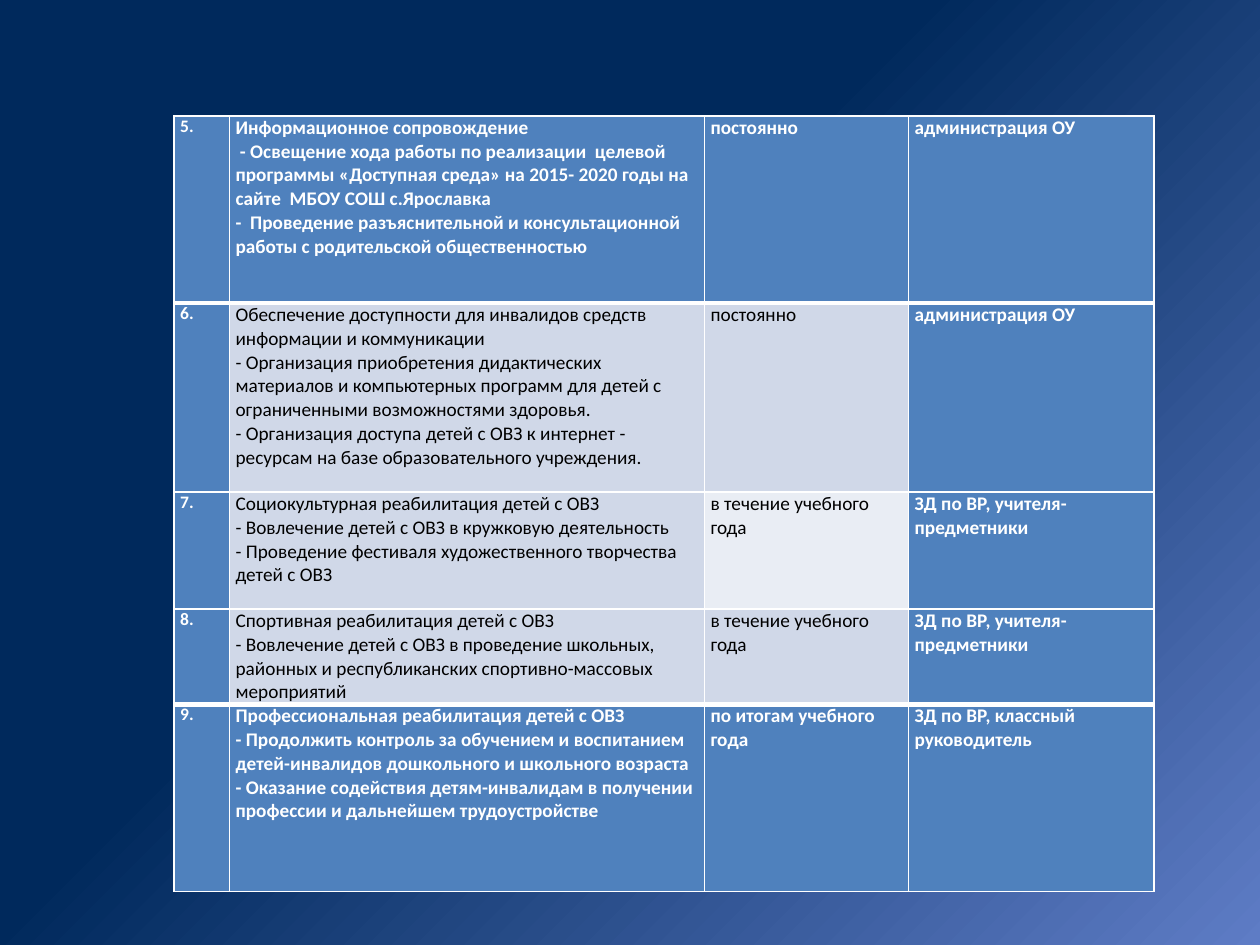
"""Build a slide with a table of accessibility measures, items 5 to 9."""
from dataclasses import dataclass

from lxml import etree
from pptx import Presentation
from pptx.dml.color import RGBColor
from pptx.oxml.ns import qn
from pptx.util import Inches, Pt

WHITE = RGBColor(0xFF, 0xFF, 0xFF)
BLACK = RGBColor(0x00, 0x00, 0x00)
BLUE = RGBColor(0x4F, 0x81, 0xBD)
BAND = RGBColor(0xD0, 0xD8, 0xE8)
PALE = RGBColor(0xE9, 0xED, 0xF4)
GLOW = RGBColor(0x5E, 0x7C, 0xC5)
NAVY = RGBColor(0x00, 0x29, 0x5C)

WIDTH, HEIGHT = Inches(10), Inches(7.5)
LEFT, TOP = 0.138, 0.1227
COLUMNS = (0.044, 0.377, 0.162, 0.195)
FONT = "Calibri"
NUMBER_SIZE, TEXT_SIZE = Pt(10), Pt(11)
THIN, THICK = Pt(1), Pt(3)
MARGIN = Inches(0.05)


@dataclass(frozen=True)
class Measure:
    """One table row; height is a share of the slide's height."""
    number: str
    tasks: tuple[str, ...]
    term: str
    owner: str
    height: float
    task_fill: RGBColor = BAND
    term_fill: RGBColor = BAND
    top: int = THIN
    bottom: int = THIN


MEASURES = (
    Measure("5.", (
        "Информационное сопровождение",
        " - Освещение хода работы по реализации  целевой программы "
        "«Доступная среда» на 2015- 2020 годы на сайте  МБОУ СОШ с.Ярославка",
        "-  Проведение разъяснительной и консультационной работы "
        "с родительской общественностью",
    ), "постоянно", "администрация ОУ", 0.198, BLUE, BLUE, bottom=THICK),
    Measure("6.", (
        "Обеспечение доступности для инвалидов средств информации и коммуникации",
        "- Организация приобретения дидактических материалов и компьютерных "
        "программ для детей с ограниченными возможностями здоровья.",
        "- Организация доступа детей с ОВЗ к интернет - ресурсам на базе "
        "образовательного учреждения.",
    ), "постоянно", "администрация ОУ", 0.2, top=THICK),
    Measure("7.", (
        "Социокультурная реабилитация детей с ОВЗ",
        "- Вовлечение детей с ОВЗ в кружковую деятельность",
        "- Проведение фестиваля художественного творчества детей с ОВЗ",
    ), "в течение учебного года", "ЗД по ВР, учителя-предметники", 0.124,
        term_fill=PALE),
    Measure("8.", (
        "Спортивная реабилитация детей с ОВЗ",
        "- Вовлечение детей с ОВЗ в проведение школьных,  районных и "
        "республиканских спортивно-массовых мероприятий",
    ), "в течение учебного года", "ЗД по ВР, учителя-предметники", 0.099,
        bottom=THICK),
    Measure("9.", (
        "Профессиональная реабилитация детей с ОВЗ",
        "- Продолжить контроль за обучением и воспитанием детей-инвалидов "
        "дошкольного и школьного возраста",
        "- Оказание содействия детям-инвалидам в получении профессии и "
        "дальнейшем трудоустройстве",
    ), "по итогам учебного года", "ЗД по ВР, классный руководитель", 0.198,
        BLUE, BLUE, top=THICK),
)


def paint_background(s) -> None:
    """Fill the slide with a radial glow from its bottom right corner."""
    fill = s.background.fill
    fill.gradient()
    for stop, color, position in zip(fill.gradient_stops, (GLOW, NAVY), (0, 0.58)):
        stop.color.rgb = color
        stop.position = position
    grad = s.element.find(".//" + qn("a:gradFill"))
    lin = grad.find(qn("a:lin"))
    radial = etree.Element(qn("a:path"), path="circle")
    etree.SubElement(radial, qn("a:fillToRect"), l="100000", t="100000")
    grad.replace(lin, radial)


def set_borders(cell, top: int, bottom: int) -> None:
    """Draw white borders, with the given top and bottom widths."""
    tc_pr = cell._tc.get_or_add_tcPr()
    sides = (("a:lnL", THIN), ("a:lnR", THIN), ("a:lnT", top), ("a:lnB", bottom))
    for i, (tag, width) in enumerate(sides):
        ln = etree.Element(qn(tag), w=str(int(width)))
        solid = etree.SubElement(ln, qn("a:solidFill"))
        etree.SubElement(solid, qn("a:srgbClr"), val=str(WHITE))
        tc_pr.insert(i, ln)


def fill_cell(cell, lines: tuple[str, ...], fill: RGBColor, size: int) -> None:
    """Write the lines, bold white on blue and plain black elsewhere."""
    cell.fill.solid()
    cell.fill.fore_color.rgb = fill
    cell.margin_left = cell.margin_right = MARGIN
    cell.margin_top = cell.margin_bottom = 0
    tf = cell.text_frame
    tf.text = "\n".join(lines)
    for p in tf.paragraphs:
        p.font.name = FONT
        p.font.size = size
        p.font.bold = fill == BLUE
        p.font.color.rgb = WHITE if fill == BLUE else BLACK


def add_measures(s) -> None:
    """Add the table of measures."""
    height = sum(m.height for m in MEASURES)
    table = s.shapes.add_table(
        len(MEASURES), len(COLUMNS), int(WIDTH * LEFT), int(HEIGHT * TOP),
        int(WIDTH * sum(COLUMNS)), int(HEIGHT * height)).table
    table.first_row = table.horz_banding = False
    for column, share in zip(table.columns, COLUMNS):
        column.width = int(WIDTH * share)
    for row, m in zip(table.rows, MEASURES):
        row.height = int(HEIGHT * m.height)
        contents = (
            ((m.number,), BLUE, NUMBER_SIZE),
            (m.tasks, m.task_fill, TEXT_SIZE),
            ((m.term,), m.term_fill, TEXT_SIZE),
            ((m.owner,), BLUE, TEXT_SIZE),
        )
        for cell, (lines, fill, size) in zip(row.cells, contents):
            fill_cell(cell, lines, fill, size)
            set_borders(cell, m.top, m.bottom)


def main() -> None:
    """Build and save the slide."""
    prs = Presentation()
    prs.slide_width, prs.slide_height = WIDTH, HEIGHT
    s = prs.slides.add_slide(prs.slide_layouts[6])
    paint_background(s)
    add_measures(s)
    prs.save("out.pptx")


if __name__ == "__main__":
    main()
